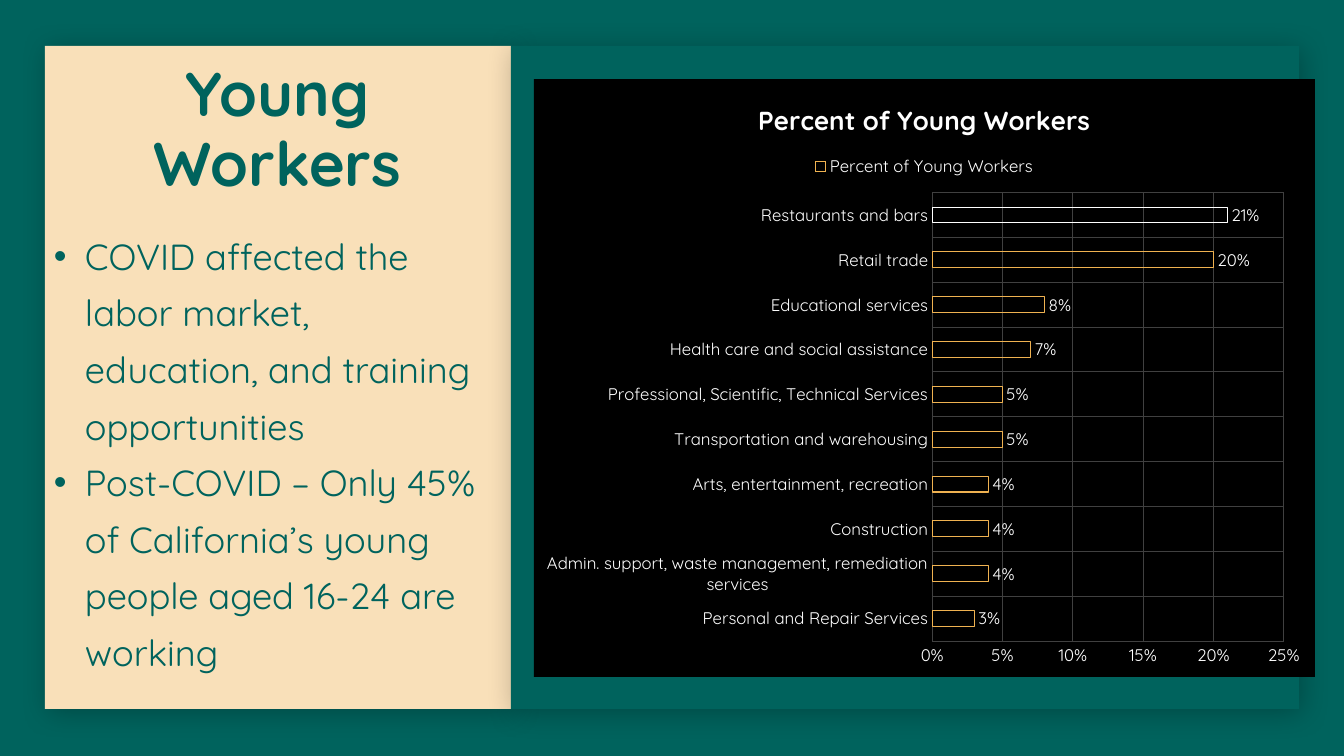
from lxml.etree import SubElement
from pptx import Presentation
from pptx.chart.data import CategoryChartData
from pptx.dml.color import RGBColor
from pptx.enum.chart import XL_CHART_TYPE, XL_LABEL_POSITION, XL_LEGEND_POSITION, XL_TICK_MARK
from pptx.enum.shapes import MSO_SHAPE
from pptx.enum.text import MSO_ANCHOR, PP_ALIGN
from pptx.oxml import parse_xml
from pptx.oxml.ns import nsdecls, qn
from pptx.util import Pt

PX = 12192000 / 1344
FONT = "Quicksand"
COLORS = {"teal": "00635D", "cream": "F9E0B9", "black": "000000",
          "white": "FFFFFF", "grid": "404040", "gold": "EFB251"}
POINTS = [
    "COVID affected the labor market, education, and training opportunities",
    "Post-COVID – Only 45% of California’s young people aged 16-24 are working",
]
SHARES = [
    ("Personal and Repair Services", 0.03),
    ("Admin. support, waste management, remediation services", 0.04),
    ("Construction", 0.04),
    ("Arts, entertainment, recreation", 0.04),
    ("Transportation and warehousing", 0.05),
    ("Professional, Scientific, Technical Services", 0.05),
    ("Health care and social assistance", 0.07),
    ("Educational services", 0.08),
    ("Retail trade", 0.2),
    ("Restaurants and bars", 0.21),
]


def px(n):
    return round(n * PX)


def color(name):
    return RGBColor.from_string(COLORS[name])


def style(font, size, name, bold=False):
    font.name = FONT
    font.size = Pt(size)
    font.bold = bold
    font.color.rgb = color(name)


def stroke(line, name):
    line.color.rgb = color(name)
    line.width = Pt(0.75)


def panel(slide, box, name):
    shape = slide.shapes.add_shape(MSO_SHAPE.RECTANGLE, *map(px, box))
    shape.fill.solid()
    shape.fill.fore_color.rgb = color(name)
    shape.line.fill.background()
    shape.shadow.inherit = False
    glow = shape.element.spPr.find(qn("a:effectLst"))
    shade = SubElement(glow, qn("a:outerShdw"), blurRad=str(Pt(20)),
                       dist=str(Pt(4)), dir="2700000", rotWithShape="0")
    tint = SubElement(shade, qn("a:srgbClr"), val=COLORS["black"])
    SubElement(tint, qn("a:alpha"), val="25000")


def frame(slide, box, left, right):
    text = slide.shapes.add_textbox(*map(px, box)).text_frame
    text.word_wrap = True
    text.margin_left, text.margin_right = px(left), px(right)
    text.margin_top = text.margin_bottom = px(5)
    return text


def heading(slide, box):
    text = frame(slide, box, 20, 20)
    text.vertical_anchor = MSO_ANCHOR.MIDDLE
    text.text = "Young Workers"
    para = text.paragraphs[0]
    para.alignment = PP_ALIGN.CENTER
    para.line_spacing = 0.95
    style(para.runs[0].font, 44, "teal", True)


def bullets(slide, box):
    text = frame(slide, box, 10, 30)
    text.text = "\n".join(POINTS)
    for para in text.paragraphs:
        para.line_spacing = 1.3
        props = para._p.get_or_add_pPr()
        props.set("marL", str(px(31)))
        props.set("indent", str(-px(31)))
        tint = SubElement(props, qn("a:buClr"))
        SubElement(tint, qn("a:srgbClr"), val=COLORS["teal"])
        SubElement(props, qn("a:buFont"), typeface="Arial")
        SubElement(props, qn("a:buChar"), char="•")
        style(para.runs[0].font, 25.9, "teal")


def backdrop(chart, name):
    fill = parse_xml(
        f'<c:spPr {nsdecls("c", "a")}><a:solidFill><a:srgbClr val="{COLORS[name]}"/>'
        '</a:solidFill><a:ln><a:noFill/></a:ln></c:spPr>')
    chart.element.find(qn("c:chart")).addnext(fill)


def place(chart, x, y, w, h):
    plot = chart.element.find(qn("c:chart")).find(qn("c:plotArea"))
    old = plot.find(qn("c:layout"))
    if old is not None:
        plot.remove(old)
    layout = parse_xml(f'<c:layout {nsdecls("c")}/>')
    manual = SubElement(layout, qn("c:manualLayout"))
    for tag, val in (("layoutTarget", "inner"), ("xMode", "edge"), ("yMode", "edge"),
                     ("x", x), ("y", y), ("w", w), ("h", h)):
        SubElement(manual, qn(f"c:{tag}"), val=str(val))
    plot.insert(0, layout)


def graph(slide, box):
    title = "Percent of Young Workers"
    data = CategoryChartData(number_format="0%")
    data.categories = [name for name, share in SHARES]
    data.add_series(title, [share for name, share in SHARES])
    chart = slide.shapes.add_chart(
        XL_CHART_TYPE.BAR_CLUSTERED, *map(px, box), data).chart
    style(chart.font, 10, "white")
    backdrop(chart, "black")
    place(chart, 0.51, 0.19, 0.45, 0.75)

    chart.has_title = True
    chart.chart_title.text_frame.text = title
    style(chart.chart_title.text_frame.paragraphs[0].runs[0].font, 18.6, "white", True)
    chart.has_legend = True
    chart.legend.position = XL_LEGEND_POSITION.TOP
    chart.legend.include_in_layout = False
    style(chart.legend.font, 12, "white")

    for axis in (chart.category_axis, chart.value_axis):
        axis.major_tick_mark = axis.minor_tick_mark = XL_TICK_MARK.NONE
        axis.format.line.fill.background()
        axis.has_major_gridlines = True
        stroke(axis.major_gridlines.format.line, "grid")
        style(axis.tick_labels.font, 12, "white")
    scale = chart.value_axis
    scale.minimum_scale, scale.maximum_scale, scale.major_unit = 0, 0.25, 0.05
    scale.tick_labels.number_format = "0%"
    scale.tick_labels.number_format_is_linked = False

    plot = chart.plots[0]
    plot.vary_by_categories = False
    plot.gap_width, plot.overlap = 182, -50
    bars = plot.series[0]
    bars.format.fill.background()
    stroke(bars.format.line, "gold")
    top = bars.points[len(SHARES) - 1].format
    top.fill.background()
    stroke(top.line, "white")
    labels = bars.data_labels
    labels.show_value = True
    labels.position = XL_LABEL_POSITION.OUTSIDE_END
    labels.number_format = "0%"
    labels.number_format_is_linked = False
    style(labels.font, 12, "white")


def build():
    deck = Presentation()
    deck.slide_width, deck.slide_height = px(1344), px(756)
    slide = deck.slides.add_slide(deck.slide_layouts[6])
    slide.background.fill.solid()
    slide.background.fill.fore_color.rgb = color("teal")
    panel(slide, (45, 46, 466, 663), "cream")
    panel(slide, (511, 46, 788, 663), "teal")
    heading(slide, (44, 47, 467, 167))
    bullets(slide, (44, 216, 467, 479))
    graph(slide, (534, 79, 781, 598))
    deck.save("out.pptx")


if __name__ == "__main__":
    build()
